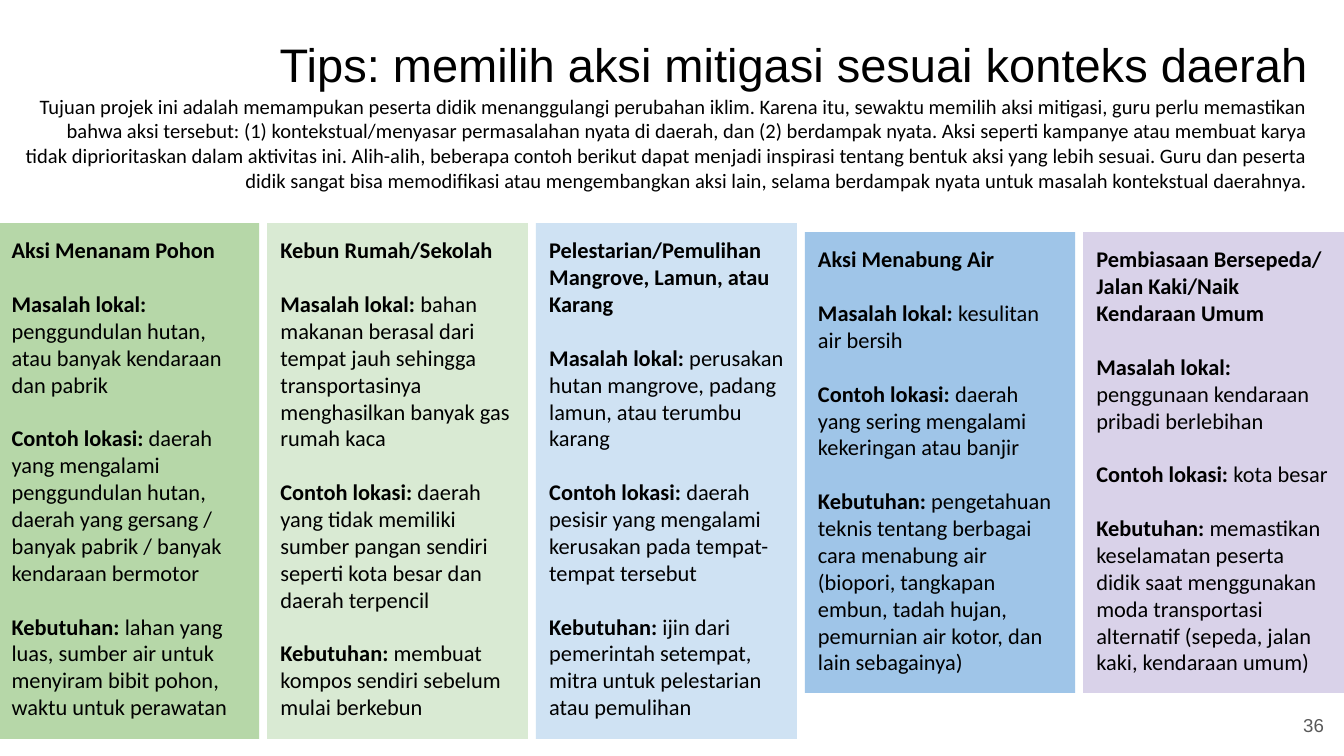
from dataclasses import dataclass

from pptx import Presentation
from pptx.dml.color import RGBColor
from pptx.enum.shapes import MSO_SHAPE
from pptx.enum.text import MSO_ANCHOR, PP_ALIGN
from pptx.util import Cm, Pt

RECT = MSO_SHAPE.RECTANGLE
TOP, MIDDLE, BOTTOM = MSO_ANCHOR.TOP, MSO_ANCHOR.MIDDLE, MSO_ANCHOR.BOTTOM
LEFT, RIGHT = PP_ALIGN.LEFT, PP_ALIGN.RIGHT

BLACK, GREY = "000000", "595959"
INSET = Cm(0.25)
GAP = 0.15  # cm between cards
LABELS = ("Masalah lokal:", "Contoh lokasi:", "Kebutuhan:")


@dataclass
class Card:
    title: str
    problem: str
    place: str
    needs: str
    fill: str
    top: float = 4.22
    width: float = 4.93
    height: float = 9.75


CARDS = [
    Card("Aksi Menanam Pohon",
         "penggundulan hutan, atau banyak kendaraan dan pabrik",
         "daerah yang mengalami penggundulan hutan, daerah yang gersang / "
         "banyak pabrik / banyak kendaraan bermotor",
         "lahan yang luas, sumber air untuk menyiram bibit pohon, "
         "waktu untuk perawatan",
         "B6D7A8"),
    Card("Kebun Rumah/Sekolah",
         "bahan makanan berasal dari tempat jauh sehingga transportasinya "
         "menghasilkan banyak gas rumah kaca",
         "daerah yang tidak memiliki sumber pangan sendiri seperti kota besar "
         "dan daerah terpencil",
         "membuat kompos sendiri sebelum mulai berkebun",
         "D9EAD3"),
    Card("Pelestarian/Pemulihan Mangrove, Lamun, atau Karang",
         "perusakan hutan mangrove, padang lamun, atau terumbu karang",
         "daerah pesisir yang mengalami kerusakan pada tempat-tempat tersebut",
         "ijin dari pemerintah setempat, mitra untuk pelestarian atau pemulihan",
         "CFE2F3"),
    Card("Aksi Menabung Air",
         "kesulitan air bersih",
         "daerah yang sering mengalami kekeringan atau banjir",
         "pengetahuan teknis tentang berbagai cara menabung air (biopori, "
         "tangkapan embun, tadah hujan, pemurnian air kotor, dan lain sebagainya)",
         "9FC5E8", top=4.39, width=5.11, height=8.71),
    Card("Pembiasaan Bersepeda/ Jalan Kaki/Naik Kendaraan Umum",
         "penggunaan kendaraan pribadi berlebihan",
         "kota besar",
         "memastikan keselamatan peserta didik saat menggunakan moda transportasi "
         "alternatif (sepeda, jalan kaki, kendaraan umum)",
         "D9D2E9", top=4.39, height=8.71),
]

INTRO = (
    "Tujuan projek ini adalah memampukan peserta didik menanggulangi perubahan "
    "iklim. Karena itu, sewaktu memilih aksi mitigasi, guru perlu memastikan "
    "bahwa aksi tersebut: (1) kontekstual/menyasar permasalahan nyata di daerah, "
    "dan (2) berdampak nyata. Aksi seperti kampanye atau membuat karya tidak "
    "diprioritaskan dalam aktivitas ini. Alih-alih, beberapa contoh berikut dapat "
    "menjadi inspirasi tentang bentuk aksi yang lebih sesuai. Guru dan peserta "
    "didik sangat bisa memodifikasi atau mengembangkan aksi lain, selama "
    "berdampak nyata untuk masalah kontekstual daerahnya."
)


def rgb(value: str) -> RGBColor:
    return RGBColor.from_string(value)


def style_run(r, font: str, size: float, color: str, bold: bool = False) -> None:
    r.font.name = font
    r.font.size = Pt(size)
    r.font.bold = bold
    r.font.color.rgb = rgb(color)


def set_frame(tf, anchor) -> None:
    tf.word_wrap = True
    tf.vertical_anchor = anchor
    tf.margin_left = tf.margin_right = INSET
    tf.margin_top = tf.margin_bottom = INSET


def add_label(s, box: tuple, text: str, font: str, size: float,
              color: str = BLACK, anchor=TOP) -> None:
    """Add a right-aligned text box; box is left, top, width, height in cm."""
    tf = s.shapes.add_textbox(*(Cm(v) for v in box)).text_frame
    set_frame(tf, anchor)
    tf.text = text
    p = tf.paragraphs[0]
    p.alignment = RIGHT
    style_run(p.runs[0], font, size, color)


def add_card(s, card: Card, left: float) -> None:
    sp = s.shapes.add_shape(RECT, Cm(left), Cm(card.top),
                            Cm(card.width), Cm(card.height))
    sp.shadow.inherit = False
    sp.fill.solid()
    sp.fill.fore_color.rgb = rgb(card.fill)
    sp.line.fill.background()

    tf = sp.text_frame
    set_frame(tf, TOP)
    tf.text = card.title
    p = tf.paragraphs[0]
    p.alignment = LEFT
    style_run(p.runs[0], "Calibri", 12, BLACK, bold=True)

    for label, body in zip(LABELS, (card.problem, card.place, card.needs)):
        p = tf.add_paragraph()
        p.alignment = LEFT
        p.space_before = Pt(14.4)
        for text, bold in ((label, True), (" " + body, False)):
            r = p.add_run()
            r.text = text
            style_run(r, "Calibri", 12, BLACK, bold)


def main() -> None:
    prs = Presentation()
    prs.slide_width, prs.slide_height = Cm(25.4), Cm(14.29)
    s = prs.slides.add_slide(prs.slide_layouts[6])

    # Title
    add_label(s, (1.3, 0.38, 23.67, 1.6),
              "Tips: memilih aksi mitigasi sesuai konteks daerah",
              "Arial", 25.2, anchor=BOTTOM)

    # Action cards, left to right
    left = -0.03
    for card in CARDS:
        add_card(s, card, left)
        left += card.width + GAP

    # Introduction and page number
    add_label(s, (0.2, 1.52, 24.77, 2.39), INTRO, "Calibri", 11)
    add_label(s, (23.75, 13.16, 1.52, 1.09), "36", "Arial", 10, GREY, MIDDLE)

    prs.save("out.pptx")


if __name__ == "__main__":
    main()
